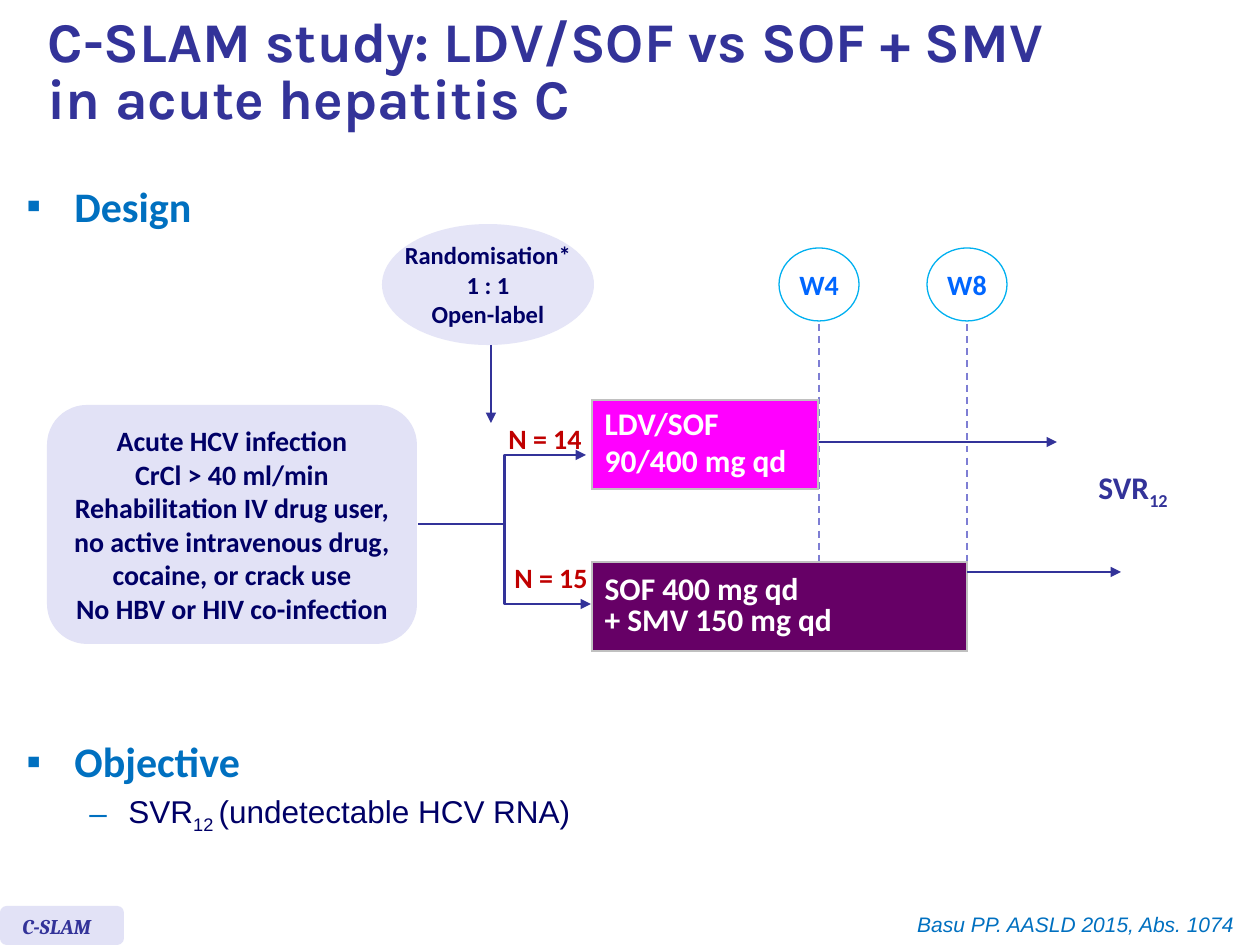
import copy
import lxml.etree
import pptx
import pptx.util
import pptx.dml.color
import pptx.enum.dml
import pptx.enum.shapes
import pptx.enum.text
import pptx.oxml.ns

SHAPE = pptx.enum.shapes.MSO_SHAPE
CONNECTOR = pptx.enum.shapes.MSO_CONNECTOR
ANCHOR = pptx.enum.text.MSO_ANCHOR
ALIGN = pptx.enum.text.PP_ALIGN
Pt = pptx.util.Pt
qn = pptx.oxml.ns.qn

COLOURS = {
    "navy": "333399", "ink": "000066", "blue": "0070C0", "week": "0066FF",
    "ring": "00B0F0", "guide": "7E7ED4", "red": "C00000", "white": "FFFFFF",
    "lilac": "E2E2F6", "pale": "E5E5F7", "magenta": "FF00FF",
    "purple": "660066", "grey": "C0C0C0",
}

# Content: boxes are left, top, width, height in px
TITLE = ["C-SLAM study: LDV/SOF vs SOF + SMV", "in acute hepatitis C"]
WEEKS = [("W8", 967), ("W4", 819)]
ARMS = [
    ([["LDV/SOF"], ["90/400 mg qd"]], (592, 400, 226, 89), "magenta"),
    ([["SOF 400 mg qd", "+ SMV 150 mg qd"]], (592, 562, 375, 89), "purple"),
]
ARM_SIZES = [("N = 14", (495, 415, 100, 46)), ("N = 15", (501, 554, 100, 46))]
RANDOMISATION = ["Randomisation*", "1 : 1", "Open-label"]
POPULATION = [
    "Acute HCV infection", "CrCl > 40 ml/min", "Rehabilitation IV drug user,",
    "no active intravenous drug,", "cocaine, or crack use",
    "No HBV or HIV co-infection",
]
ARROWS = [  # kind, start, end
    (CONNECTOR.STRAIGHT, (491, 345), (491, 423)),
    (CONNECTOR.STRAIGHT, (819, 442), (1057, 442)),
    (CONNECTOR.STRAIGHT, (967, 572), (1121, 572)),
    (CONNECTOR.ELBOW, (423, 524), (586, 455)),
    (CONNECTOR.ELBOW, (418, 524), (591, 604)),
]
PX = 914400 / 126


def emu(*lengths):
    return [round(length * PX) for length in lengths]


def rgb(name):
    return pptx.dml.color.RGBColor.from_string(COLOURS[name])


def add_run(paragraph, text, size, colour, font="Calibri", bold=True, italic=False, base=0):
    run = paragraph.add_run()
    run.text = text
    run.font.size, run.font.name = Pt(size), font
    run.font.bold, run.font.italic = bold, italic
    run.font.color.rgb = rgb(colour)
    if base:
        run.font._element.set("baseline", str(base * 1000))
    return run


def add_lines(paragraph, lines, *style):
    """Runs parted by line breaks of the same size."""
    for number, line in enumerate(lines):
        if number:
            paragraph.add_line_break()
        run = add_run(paragraph, line, *style)
        if number:
            run._r.getprevious().append(copy.deepcopy(run._r.rPr))


def next_paragraph(frame, number):
    return frame.add_paragraph() if number else frame.paragraphs[0]


def add_centred(frame, lines, size, colour):
    for number, line in enumerate(lines):
        paragraph = next_paragraph(frame, number)
        paragraph.alignment = ALIGN.CENTER
        add_run(paragraph, line, size, colour)


def add_text(box, wrap=True, parent=None):
    frame = (parent or slide).shapes.add_textbox(*emu(*box)).text_frame
    frame.word_wrap = wrap
    return frame


def add_shape(kind, box, fill, line=None, parent=None):
    shape = (parent or slide).shapes.add_shape(kind, *emu(*box))
    shape.shadow.inherit = False
    shape.fill.solid()
    shape.fill.fore_color.rgb = rgb(fill)
    if line:
        shape.line.color.rgb = rgb(line)
        shape.line.width = Pt(0.75)
    else:
        shape.line.fill.background()
    shape.text_frame.word_wrap = False
    shape.text_frame.vertical_anchor = ANCHOR.MIDDLE
    return shape


def add_line(kind, start, end, colour, width):
    line = slide.shapes.add_connector(kind, *emu(*start, *end))
    line.line.color.rgb = rgb(colour)
    line.line.width = Pt(width)
    lxml.etree.SubElement(line._element.spPr, qn("a:effectLst"))
    return line


def add_bullet(paragraph, mark, left, hanging):
    properties = paragraph._p.get_or_add_pPr()
    properties.set("marL", str(emu(left)[0]))
    properties.set("indent", str(emu(-hanging)[0]))
    colour = lxml.etree.SubElement(properties, qn("a:buClr"))
    lxml.etree.SubElement(colour, qn("a:srgbClr"), val=COLOURS["blue"])
    lxml.etree.SubElement(properties, qn("a:buFont"), typeface="Arial")
    lxml.etree.SubElement(properties, qn("a:buChar"), char=mark)


def add_arm(paragraphs, box, fill):
    table = slide.shapes.add_table(1, 1, *emu(*box)).table
    table.first_row = table.horz_banding = False
    cell = table.cell(0, 0)
    cell.vertical_anchor = ANCHOR.MIDDLE
    for number, lines in enumerate(paragraphs):
        paragraph = next_paragraph(cell.text_frame, number)
        paragraph.line_spacing = 0.8
        if number:
            paragraph.space_before = Pt(3.6)
        add_lines(paragraph, lines, 18, "white")
    properties = cell._tc.get_or_add_tcPr()
    for side in ("lnL", "lnR", "lnT", "lnB"):
        border = lxml.etree.SubElement(properties, qn("a:" + side), w=str(Pt(1)))
        paint = lxml.etree.SubElement(border, qn("a:solidFill"))
        lxml.etree.SubElement(paint, qn("a:srgbClr"), val=COLOURS["grey"])
    cell.fill.solid()
    cell.fill.fore_color.rgb = rgb(fill)


deck = pptx.Presentation()
deck.slide_width, deck.slide_height = emu(1260, 945)
slide = deck.slides.add_slide(deck.slide_layouts[5])

# Title
title = slide.shapes.title
title.left, title.top, title.width, title.height = emu(35, 10, 1131, 135)
title.text_frame.auto_size = pptx.enum.text.MSO_AUTO_SIZE.NONE
title.text_frame.vertical_anchor = ANCHOR.TOP
heading = title.text_frame.paragraphs[0]
heading.alignment = ALIGN.LEFT
heading.line_spacing = 0.85
add_lines(heading, TITLE, 32, "navy", "Karla")

# Week markers with their guides
for week, centre in WEEKS:
    guide = add_line(CONNECTOR.STRAIGHT, (centre, 324), (centre, 631), "guide", 1)
    guide.line.dash_style = pptx.enum.dml.MSO_LINE.DASH
    marker = add_shape(SHAPE.OVAL, (centre - 40, 248, 80, 73), "white", "ring")
    add_centred(marker.text_frame, [week], 16, "week")

# Treatment arms
for arm in ARMS:
    add_arm(*arm)
for label, box in ARM_SIZES:
    add_centred(add_text(box, wrap=False), [label], 16, "red")

# Randomisation and study population
randomisation = add_shape(SHAPE.OVAL, (382, 224, 212, 121), "pale")
add_centred(randomisation.text_frame, RANDOMISATION, 14, "ink")
population = add_shape(SHAPE.ROUNDED_RECTANGLE, (47, 405, 370, 239), "lilac")
add_centred(population.text_frame, POPULATION, 16, "ink")
for kind, start, end in ARROWS:
    arrow = add_line(kind, start, end, "navy", 1.5)
    lxml.etree.SubElement(arrow.line._get_or_add_ln(), qn("a:tailEnd"), type="triangle")

# Endpoint
endpoint = add_text((1086, 462, 98, 50), wrap=False).paragraphs[0]
add_run(endpoint, "SVR", 18, "navy")
add_run(endpoint, "12", 18, "navy", base=-25)

# Design and objective
design = add_text((14, 174, 249, 79)).paragraphs[0]
add_bullet(design, "▪", 48, 48)
add_run(design, "Design", 24, "blue")
goals = add_text((14, 731, 1218, 147))
objective, outcome = goals.paragraphs[0], goals.add_paragraph()
add_bullet(objective, "▪", 48, 48)
add_bullet(outcome, "–", 102, 39)
outcome.level = 1
objective.line_spacing = outcome.line_spacing = Pt(28)
add_run(objective, "Objective", 24, "blue")
for text, base in [("SVR", 0), ("12 ", -25), ("(undetectable HCV RNA)", 0)]:
    add_run(outcome, text, 18, "ink", "Arial", False, base=base)

# Footer: study tag and reference
tag = slide.shapes.add_group_shape()
add_shape(SHAPE.ROUNDED_RECTANGLE, (0, 906, 124, 39), "lilac", parent=tag)
study = add_text((10, 907, 154, 38), parent=tag).paragraphs[0]
add_run(study, "C-SLAM", 12, "navy", "Cambria", italic=True)
reference = add_text((630, 905, 629, 38))
reference.margin_right = emu(25)[0]
reference.paragraphs[0].alignment = ALIGN.RIGHT
add_run(reference.paragraphs[0], "Basu PP. AASLD 2015, Abs. 1074", 12, "blue", "Arial", False, True)

deck.save("out.pptx")
